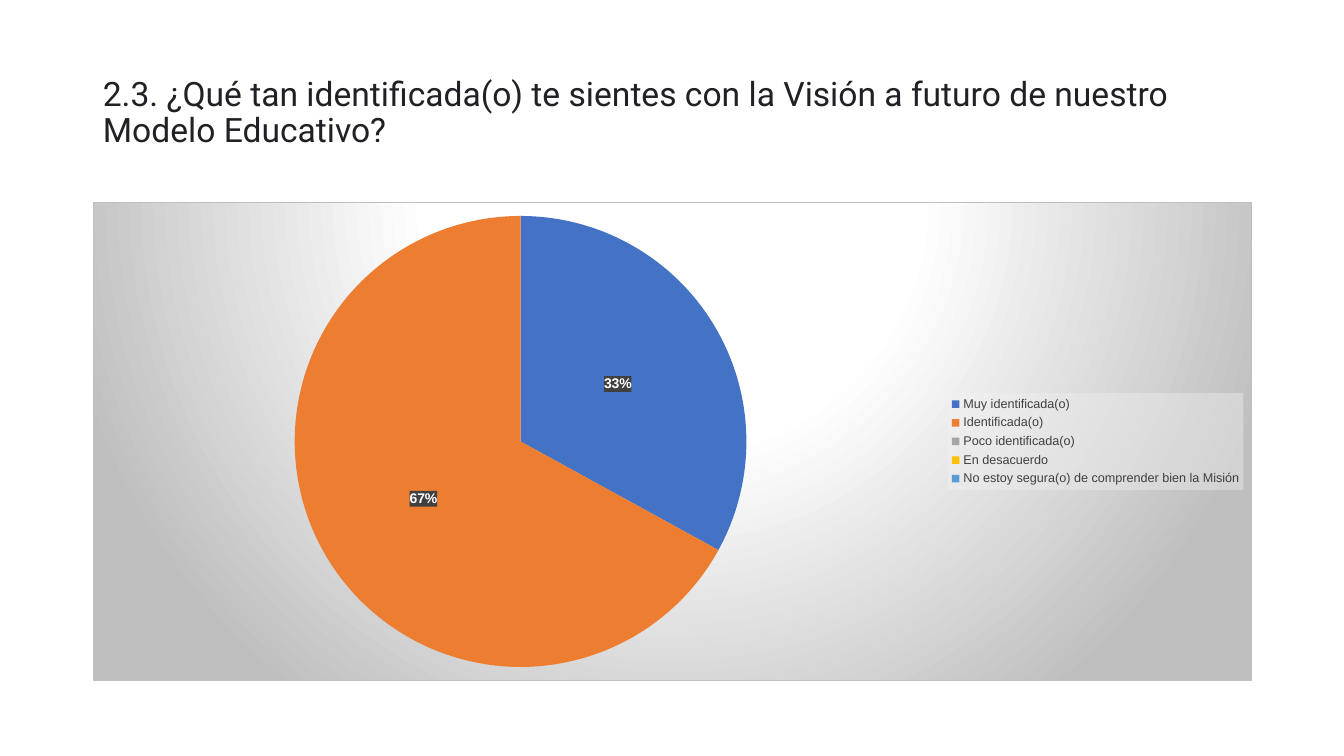
from pptx import Presentation
from pptx.chart.data import CategoryChartData
from pptx.dml.color import RGBColor
from pptx.enum.chart import XL_CHART_TYPE as ChartType
from pptx.enum.chart import XL_LABEL_POSITION as LabelPosition
from pptx.enum.chart import XL_LEGEND_POSITION as LegendPosition
from pptx.enum.text import MSO_ANCHOR as Anchor
from pptx.oxml import parse_xml
from pptx.oxml.ns import nsdecls, qn
from pptx.util import Inches, Pt

TITLE = "2.3. ¿Qué tan identificada(o) te sientes con la Visión a futuro de nuestro Modelo Educativo?"
ANSWERS = {
    "Muy identificada(o)": (33, "4472C4"),
    "Identificada(o)": (67, "ED7D31"),
    "Poco identificada(o)": (0, "A5A5A5"),
    "En desacuerdo": (0, "FFC000"),
    "No estoy segura(o) de comprender bien la Misión": (0, "5B9BD5"),
}
GRADIENT_STOPS = [(0, "FFFFFF"), (39, "FFFFFF"), (100, "BFBFBF")]


def color(value):
    return RGBColor.from_string(value)


def format_font(font, value, **formats):
    font.color.rgb = color(value)
    for name, setting in formats.items():
        setattr(font, name, setting)


def solid_xml(value, alpha=100):
    return (f'<a:solidFill><a:srgbClr val="{value}"><a:alpha val="{alpha * 1000}"/>'
            "</a:srgbClr></a:solidFill>")


def radial_xml(stops):
    """Circular gradient centred above the chart area."""
    stop_xml = "".join(f'<a:gs pos="{position * 1000}"><a:srgbClr val="{value}"/></a:gs>'
                       for position, value in stops)
    return (f'<a:gradFill><a:gsLst>{stop_xml}</a:gsLst><a:path path="circle">'
            '<a:fillToRect l="50000" t="-80000" r="50000" b="180000"/></a:path></a:gradFill>')


def set_area(element, fill, line="<a:ln><a:noFill/></a:ln>"):
    """Give a chart part, whose font is already set, a fill and an outline."""
    area = parse_xml(f'<c:spPr {nsdecls("c", "a")}>{fill}{line}</c:spPr>')
    element.find(qn("c:txPr")).addprevious(area)


class SurveySlide:
    title_font = {"name": "Roboto", "size": Pt(24)}
    chart_font = {"name": "Arial", "size": Pt(10)}
    legend_font = {"name": "Arial", "size": Pt(9)}
    left, width = Inches(0.92), Inches(11.5)

    def __init__(self, presentation):
        self.slide = presentation.slides.add_slide(presentation.slide_layouts[5])

    def add_title(self, text):
        title = self.slide.shapes.title
        box = {"left": self.left, "top": Inches(0.4),
               "width": self.width, "height": Inches(1.45)}
        for name, length in box.items():
            setattr(title, name, length)
        frame = title.text_frame
        frame.text = text
        frame.word_wrap = True
        frame.vertical_anchor = Anchor.MIDDLE
        paragraph = frame.paragraphs[0]
        paragraph.alignment = 1
        paragraph.line_spacing = 0.9
        format_font(paragraph.runs[0].font, "202124", **self.title_font)

    def add_pie(self, answers):
        data = CategoryChartData()
        data.categories = list(answers)
        data.add_series("Series 1", [value for value, _ in answers.values()])
        chart = self.slide.shapes.add_chart(
            ChartType.PIE, self.left, Inches(2), self.width, Inches(4.76), data).chart
        chart.has_title = False
        format_font(chart.font, "000000", **self.chart_font)
        border = f'<a:ln w="{Pt(0.75)}">{solid_xml("BFBFBF")}</a:ln>'
        set_area(chart.element, radial_xml(GRADIENT_STOPS), border)
        series = chart.plots[0].series[0]
        for index, (_, value) in enumerate(answers.values()):
            fill = series.points[index].format.fill
            fill.solid()
            fill.fore_color.rgb = color(value)
        self.format_labels(series.data_labels, answers)
        self.add_legend(chart)

    def format_labels(self, labels, answers):
        formats = {"show_percentage": True, "show_value": False, "number_format": "0%",
                   "number_format_is_linked": False, "position": LabelPosition.CENTER}
        for name, setting in formats.items():
            setattr(labels, name, setting)
        format_font(labels.font, "FFFFFF", bold=True, **self.chart_font)
        element = labels.font and labels._element
        set_area(element, solid_xml("404040", 90))
        empty = [index for index, (value, _) in enumerate(answers.values()) if not value]
        for place, index in enumerate(empty):
            element.insert(place, parse_xml(
                f'<c:dLbl {nsdecls("c")}><c:idx val="{index}"/><c:delete val="1"/></c:dLbl>'))

    def add_legend(self, chart):
        chart.has_legend = True
        legend = chart.legend
        legend.position = LegendPosition.RIGHT
        legend.include_in_layout = False
        format_font(legend.font, "404040", **self.legend_font)
        set_area(legend._element, solid_xml("F2F2F2", 39))


def main():
    presentation = Presentation()
    presentation.slide_width = Inches(13.33)
    presentation.slide_height = Inches(7.5)
    survey = SurveySlide(presentation)
    survey.add_title(TITLE)
    survey.add_pie(ANSWERS)
    presentation.save("out.pptx")


if __name__ == "__main__":
    main()
